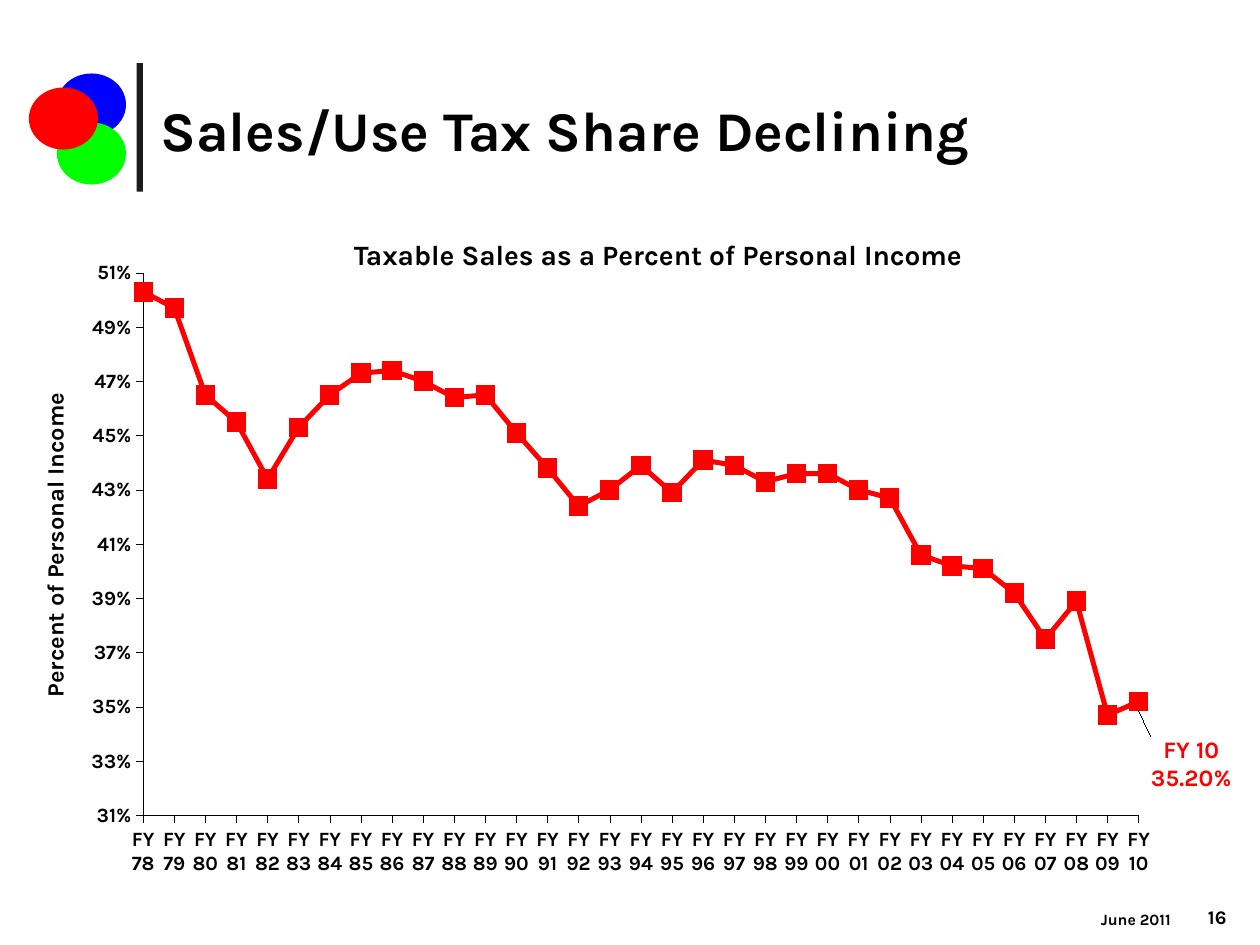
from lxml.etree import SubElement
from pptx import Presentation
from pptx.chart.data import CategoryChartData
from pptx.dml.color import RGBColor
from pptx.enum.chart import XL_CHART_TYPE as ChartType
from pptx.enum.chart import XL_LABEL_POSITION as LabelPos
from pptx.enum.chart import XL_MARKER_STYLE as Marker
from pptx.enum.chart import XL_TICK_LABEL_POSITION as TickLabels
from pptx.enum.chart import XL_TICK_MARK as Tick
from pptx.enum.shapes import MSO_SHAPE as Shape
from pptx.enum.text import MSO_ANCHOR as Anchor
from pptx.enum.text import MSO_AUTO_SIZE as AutoSize
from pptx.enum.text import PP_ALIGN as Align
from pptx.oxml import parse_xml
from pptx.oxml.ns import nsdecls, qn
from pptx.util import Pt

BLACK, RED = "000000", "FF0000"
FONT = "Karla"

# Taxable sales in percent of personal income, FY 78 to FY 10
SHARES = [50.3, 49.7, 46.5, 45.5, 43.4, 45.3, 46.5, 47.3, 47.4, 47.0, 46.4,
          46.5, 45.1, 43.8, 42.4, 43.0, 43.9, 42.9, 44.1, 43.9, 43.3, 43.6,
          43.6, 43.0, 42.7, 40.6, 40.2, 40.1, 39.2, 37.5, 38.9, 34.7, 35.2]
YEARS = [f"FY {year % 100:02d}" for year in range(1978, 2011)]


def color(hex_code):
    return RGBColor.from_string(hex_code)


def style_font(font, size, hex_code=BLACK, name=FONT):
    font.name, font.size, font.bold = name, Pt(size), True
    font.color.rgb = color(hex_code)


def write(frame, text, size, align=Align.LEFT, anchor=Anchor.TOP, hex_code=BLACK):
    frame.word_wrap = True
    frame.auto_size = AutoSize.NONE
    frame.vertical_anchor = anchor
    paragraph = frame.paragraphs[0]
    paragraph.alignment = align
    run = paragraph.add_run()
    run.text = text
    style_font(run.font, size, hex_code)


def add_text(slide, box, text, size, **options):
    write(slide.shapes.add_textbox(*map(Pt, box)).text_frame, text, size, **options)


def add_block(shapes, kind, box, hex_code):
    block = shapes.add_shape(kind, *map(Pt, box))
    block.shadow.inherit = False
    block.fill.solid()
    block.fill.fore_color.rgb = color(hex_code)
    block.line.fill.background()


def chart_xml(tag, attributes="", inner=""):
    return parse_xml(f'<c:{tag} {nsdecls("c")} {attributes}>{inner}</c:{tag}>')


def manual_layout(x, y, w=None, h=None, target=None, mode=None):
    parts = [("layoutTarget", target), ("xMode", mode), ("yMode", mode),
             ("x", x), ("y", y), ("w", w), ("h", h)]
    inner = "".join(f'<c:{tag} val="{value}"/>' for tag, value in parts
                    if value is not None)
    return chart_xml("layout", inner=f"<c:manualLayout>{inner}</c:manualLayout>")


def set_layout(parent, layout, after=None):
    for old in parent.findall(qn("c:layout")):
        parent.remove(old)
    if after is None:
        parent.insert(0, layout)
    else:
        parent.find(qn(after)).addnext(layout)


def style_axis(axis):
    axis.has_major_gridlines = False
    axis.major_tick_mark, axis.minor_tick_mark = Tick.OUTSIDE, Tick.NONE
    axis.tick_label_position = TickLabels.LOW
    style_font(axis.tick_labels.font, 12)
    axis.format.line.color.rgb = color(BLACK)
    axis.format.line.width = Pt(0.25)


def start_line_on_axis(axis):
    for old in axis._element.findall(qn("c:crossBetween")):
        axis._element.remove(old)
    crossing = chart_xml("crossBetween", 'val="midCat"')
    axis._element.find(qn("c:majorUnit")).addprevious(crossing)


def label_last_year(series):
    series.data_labels.show_value = False
    label = series.points[len(SHARES) - 1].data_label
    style_font(label.font, 14, RED)
    label.position = LabelPos.BELOW
    # Category above value, shifted to the right of the line's end
    node = series.data_labels._element.find(qn("c:dLbl"))
    set_layout(node, manual_layout(0.046, 0.035), after="c:idx")
    number_format = chart_xml("numFmt", 'formatCode="0.00%" sourceLinked="0"')
    node.find(qn("c:layout")).addnext(number_format)
    for tag in ("c:showVal", "c:showCatName"):
        node.find(qn(tag)).set("val", "1")
    SubElement(node, qn("c:separator")).text = "\n"


def add_share_chart(slide, box):
    shares = CategoryChartData(number_format="0%")
    shares.categories = YEARS
    shares.add_series("Series 1", [round(share / 100, 3) for share in SHARES])
    chart = slide.shapes.add_chart(
        ChartType.LINE_MARKERS, *map(Pt, box), shares).chart
    chart.has_title = chart.has_legend = False
    style_font(chart.font, 18, name="Times New Roman")
    plot_area = chart._chartSpace.find(".//" + qn("c:plotArea"))
    set_layout(plot_area, manual_layout(0.105, 0.036, 0.868, 0.899, "inner", "edge"))

    # Axes
    style_axis(chart.category_axis)
    percent = chart.value_axis
    style_axis(percent)
    percent.minimum_scale, percent.maximum_scale = 0.31, 0.51
    percent.major_unit = 0.02
    percent.tick_labels.number_format = "0%"
    percent.tick_labels.number_format_is_linked = False
    start_line_on_axis(percent)
    axis_name = percent.axis_title.text_frame.paragraphs[0].add_run()
    axis_name.text = "Percent of Personal Income"
    style_font(axis_name.font, 14)
    set_layout(percent.axis_title._element,
               manual_layout(0.011, 0.218, mode="edge"), after="c:tx")

    # Line and markers
    chart.plots[0].vary_by_categories = False
    series = chart.plots[0].series[0]
    series.smooth = False
    series.format.line.color.rgb = color(RED)
    series.format.line.width = Pt(3)
    series.marker.style, series.marker.size = Marker.SQUARE, 11
    series.marker.format.fill.solid()
    series.marker.format.fill.fore_color.rgb = color(RED)
    series.marker.format.line.color.rgb = color(RED)
    label_last_year(series)


def main():
    deck = Presentation()
    deck.slide_width, deck.slide_height = Pt(720), Pt(540)
    slide = deck.slides.add_slide(deck.slide_layouts[5])

    # Three circles and the bar beside the title
    circles = slide.shapes.add_group_shape().shapes
    for left, top, hex_code in ((32.5, 42, "0000FF"), (32.5, 70, "00FF00"),
                                (16.5, 50, RED)):
        add_block(circles, Shape.OVAL, (left, top, 39.5, 35.5), hex_code)
    add_block(slide.shapes, Shape.RECTANGLE, (78, 36, 3.6, 73.5), "1C1C1C")

    # Title
    title = slide.shapes.title
    title.left, title.top, title.width, title.height = map(Pt, (84.5, 39.5, 613.5, 68.5))
    write(title.text_frame, "Sales/Use Tax Share Declining", 32, anchor=Anchor.MIDDLE)

    # Chart with its heading
    add_text(slide, (116.5, 132, 519, 26.5),
             "Taxable Sales as a Percent of Personal Income", 16, align=Align.CENTER)
    add_share_chart(slide, (13, 143.5, 691, 357))

    # Footer
    for box, text, size in (((558, 516, 118, 18), "June 2011", 9),
                            ((672, 516, 36, 18), "16", 11)):
        add_text(slide, box, text, size, align=Align.RIGHT, anchor=Anchor.BOTTOM)

    deck.save("out.pptx")


if __name__ == "__main__":
    main()
